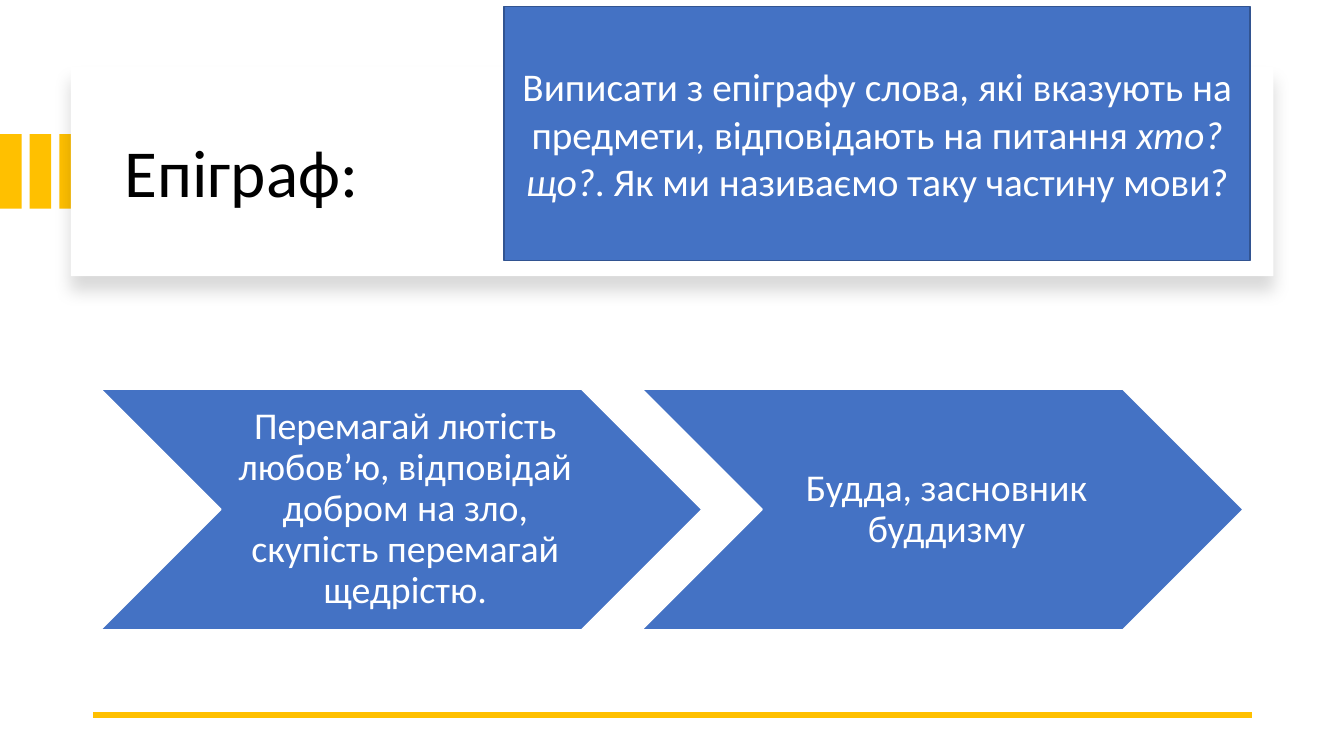
from dataclasses import dataclass

from lxml.etree import SubElement
from pptx import Presentation
from pptx.dml.color import RGBColor
from pptx.enum.shapes import MSO_CONNECTOR, MSO_SHAPE
from pptx.enum.text import MSO_ANCHOR, PP_ALIGN
from pptx.oxml.ns import qn
from pptx.util import Pt


@dataclass(frozen=True)
class Theme:
    font: str = "Calibri"
    accent: str = "FFC000"
    blue: str = "4472C4"
    border: str = "325491"
    white: str = "FFFFFF"
    black: str = "000000"
    title: float = 48
    task: float = 28
    quote: float = 27


THEME = Theme()
TITLE = [("Епіграф:", False)]
TASK = [
    ("Виписати з епіграфу слова, які вказують на предмети, відповідають на питання ", False),
    ("хто? що?", True),
    (". Як ми називаємо таку частину мови?", False),
]
CHEVRONS = [
    "Перемагай лютість любов’ю, відповідай добром на зло, скупість перемагай щедрістю.",
    "Будда, засновник буддизму",
]
STRIPE_COUNT = 3


def write(shape, runs, size, color, align=PP_ALIGN.LEFT, spacing=1.0, insets=(7.2, 3.6, 7.2, 3.6)):
    frame = shape.text_frame
    frame.word_wrap = True
    frame.vertical_anchor = MSO_ANCHOR.MIDDLE
    frame.margin_left, frame.margin_top, frame.margin_right, frame.margin_bottom = map(Pt, insets)
    para = frame.paragraphs[0]
    para.alignment = align
    para.line_spacing = spacing
    for text, italic in runs:
        span = para.add_run()
        span.text = text
        span.font.name = THEME.font
        span.font.size = Pt(size)
        span.font.italic = italic
        span.font.color.rgb = RGBColor.from_string(color)


def add_block(page, kind, bounds, fill, line=None):
    block = page.shapes.add_shape(kind, *map(Pt, bounds))
    block.shadow.inherit = False
    block.fill.solid()
    block.fill.fore_color.rgb = RGBColor.from_string(fill)
    if line:
        block.line.color.rgb = RGBColor.from_string(line)
        block.line.width = Pt(1)
    else:
        block.line.fill.background()
    return block


def add_soft_shadow(block):
    effects = block._element.spPr.find(qn("a:effectLst"))
    shadow = SubElement(effects, qn("a:outerShdw"), blurRad=str(Pt(11)), dist=str(Pt(10)),
                        dir="5400000", algn="t", rotWithShape="0")
    color = SubElement(shadow, qn("a:srgbClr"), val=THEME.black)
    SubElement(color, qn("a:alpha"), val="15000")


def add_rule(page, start, end):
    rule = page.shapes.add_connector(MSO_CONNECTOR.STRAIGHT, *map(Pt, start + end))
    rule.line.color.rgb = RGBColor.from_string(THEME.accent)
    rule.line.width = Pt(4.5)
    SubElement(rule._element.spPr, qn("a:effectLst"))


def main():
    deck = Presentation()
    deck.slide_width, deck.slide_height = Pt(960), Pt(540)
    page = deck.slides.add_slide(deck.slide_layouts[6])

    for index in range(STRIPE_COUNT):
        add_block(page, MSO_SHAPE.RECTANGLE, (index * 21.2, 95.8, 15.4, 53.3), THEME.accent)

    header = add_block(page, MSO_SHAPE.RECTANGLE, (50.6, 48, 859, 149.2), THEME.white)
    add_soft_shadow(header)

    title = page.shapes.add_textbox(*map(Pt, (82, 64, 182.5, 122.4)))
    write(title, TITLE, THEME.title, THEME.black, spacing=0.9)

    add_rule(page, (894.2, 510.5), (66.2, 510.5))

    for index, text in enumerate(CHEVRONS):
        chevron = add_block(page, MSO_SHAPE.CHEVRON, (72 + index * 386.6, 278, 429.4, 171.8),
                            THEME.blue, THEME.white)
        write(chevron, [(text, False)], THEME.quote, THEME.white, align=PP_ALIGN.CENTER,
              spacing=0.9, insets=(8.5, 2.8, 2.8, 2.8))

    task = add_block(page, MSO_SHAPE.RECTANGLE, (360, 4.5, 533, 181.6), THEME.blue, THEME.border)
    write(task, TASK, THEME.task, THEME.white, align=PP_ALIGN.CENTER)

    deck.save("out.pptx")


if __name__ == "__main__":
    main()
